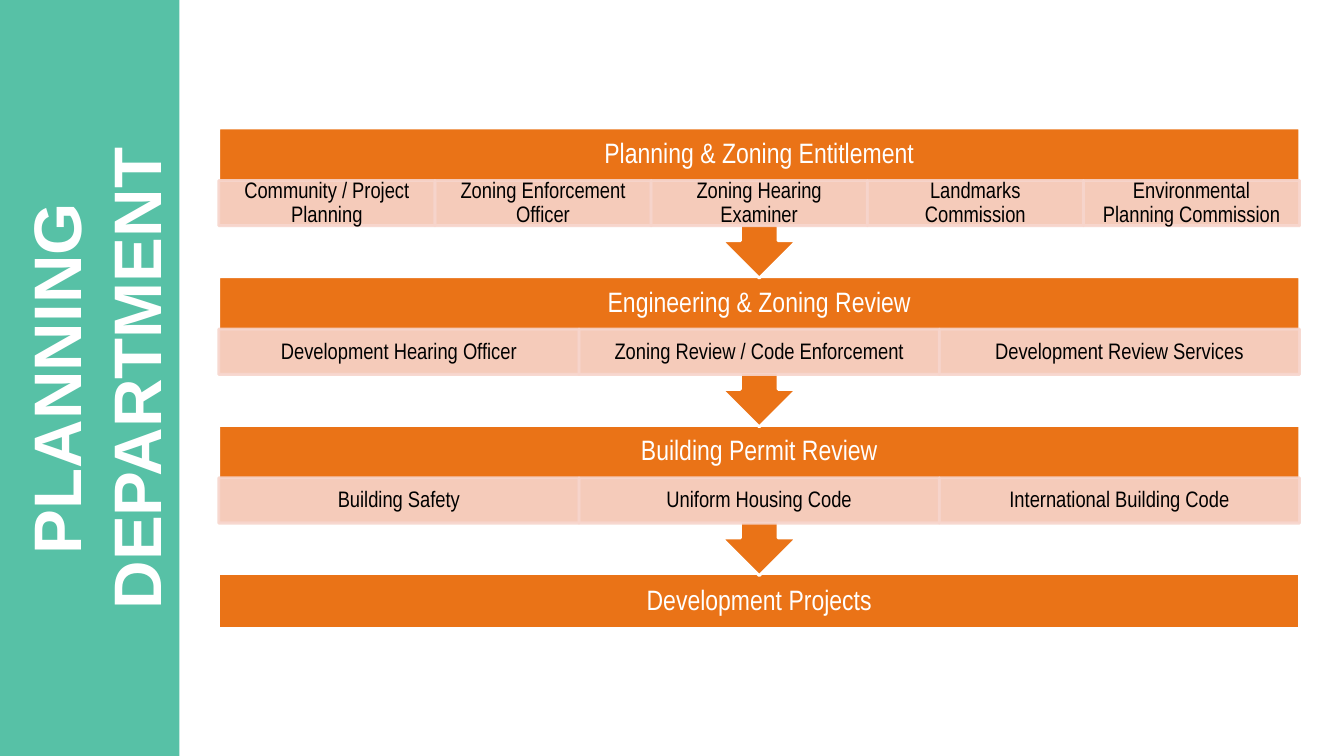
import pptx
import pptx.util
import pptx.dml.color
import pptx.enum.shapes
import pptx.enum.text
import pptx.oxml
import pptx.oxml.ns
from pptx.util import Inches

WHITE = pptx.dml.color.RGBColor(0xFF, 0xFF, 0xFF)
BLACK = pptx.dml.color.RGBColor(0x00, 0x00, 0x00)
TEAL = pptx.dml.color.RGBColor(0x57, 0xC1, 0xA6)
ORANGE = pptx.dml.color.RGBColor(0xEA, 0x73, 0x17)
PINK = pptx.dml.color.RGBColor(0xF7, 0xD5, 0xCC)

LEFT, TOP, WIDTH = 2.17, 1.27, 10.72
STAGE_PITCH = 1.475
CALLOUT_HEIGHT = 1.49
HEADER_HEIGHT = 0.52
CELL_HEIGHT = 0.45
FINAL_HEIGHT = 0.54

STAGES = [
    ("Planning & Zoning Entitlement",
     ["Community / Project Planning", "Zoning Enforcement Officer",
      "Zoning Hearing Examiner", "Landmarks Commission",
      "Environmental Planning Commission"]),
    ("Engineering & Zoning Review",
     ["Development Hearing Officer", "Zoning Review / Code Enforcement",
      "Development Review Services"]),
    ("Building Permit Review",
     ["Building Safety", "Uniform Housing Code",
      "International Building Code"]),
    ("Development Projects", []),
]

presentation = pptx.Presentation()
presentation.slide_width = Inches(13.33)
presentation.slide_height = Inches(7.5)
slide = presentation.slides.add_slide(presentation.slide_layouts[6])


def add_block(kind, left, top, width, height, fill, line=None):
    shape = slide.shapes.add_shape(
        kind, Inches(left), Inches(top), Inches(width), Inches(height))
    shape.shadow.inherit = False
    shape.fill.solid()
    shape.fill.fore_color.rgb = fill
    if line is None:
        shape.line.fill.background()
    else:
        shape.line.color.rgb = line
        shape.line.width = pptx.util.Pt(2)
    return shape


def write_text(shape, text, size, color, font_name, inset_x, inset_y):
    frame = shape.text_frame
    frame.word_wrap = True
    frame.vertical_anchor = pptx.enum.text.MSO_ANCHOR.MIDDLE
    frame.margin_left = frame.margin_right = Inches(inset_x)
    frame.margin_top = frame.margin_bottom = Inches(inset_y)
    paragraph = frame.paragraphs[0]
    paragraph.text = text
    paragraph.alignment = pptx.enum.text.PP_ALIGN.CENTER
    paragraph.font.size = pptx.util.Pt(size)
    paragraph.font.name = font_name
    paragraph.font.color.rgb = color
    return paragraph


RECTANGLE = pptx.enum.shapes.MSO_SHAPE.RECTANGLE
CALLOUT = pptx.enum.shapes.MSO_SHAPE.UP_ARROW_CALLOUT

add_block(RECTANGLE, 0, 0, 1.78, 7.5, TEAL)
title = slide.shapes.add_textbox(
    Inches(-2.66), Inches(2.92), Inches(7.2), Inches(1.67))
title.rotation = 270
title_paragraph = write_text(
    title, "PLANNING DEPARTMENT", 48, WHITE, "Arial", 0.1, 0.05)
title_paragraph.font.bold = True

for index, (heading, units) in reversed(list(enumerate(STAGES))):
    stage_top = TOP + index * STAGE_PITCH
    if units:
        callout = add_block(
            CALLOUT, LEFT, stage_top, WIDTH, CALLOUT_HEIGHT, ORANGE, WHITE)
        callout.rotation = 180
        header = slide.shapes.add_textbox(
            Inches(LEFT), Inches(stage_top), Inches(WIDTH), Inches(HEADER_HEIGHT))
    else:
        header = add_block(
            RECTANGLE, LEFT, stage_top, WIDTH, FINAL_HEIGHT, ORANGE, WHITE)
    header_paragraph = write_text(
        header, heading, 20, WHITE, "Arial Narrow", 0.16, 0.16)
    header_paragraph.line_spacing = 0.9

    for column, unit in enumerate(units):
        cell_width = WIDTH / len(units)
        cell = add_block(
            RECTANGLE, LEFT + column * cell_width, stage_top + HEADER_HEIGHT,
            cell_width, CELL_HEIGHT, PINK, PINK)
        for color in cell._element.spPr.iter(pptx.oxml.ns.qn("a:srgbClr")):
            alpha = pptx.oxml.parse_xml(
                '<a:alpha xmlns:a="http://schemas.openxmlformats.org/'
                'drawingml/2006/main" val="90000"/>')
            color.append(alpha)
        cell_paragraph = write_text(
            cell, unit, 16, BLACK, "Arial Narrow", 0.12, 0.02)
        cell_paragraph.line_spacing = 0.9

presentation.save("out.pptx")
